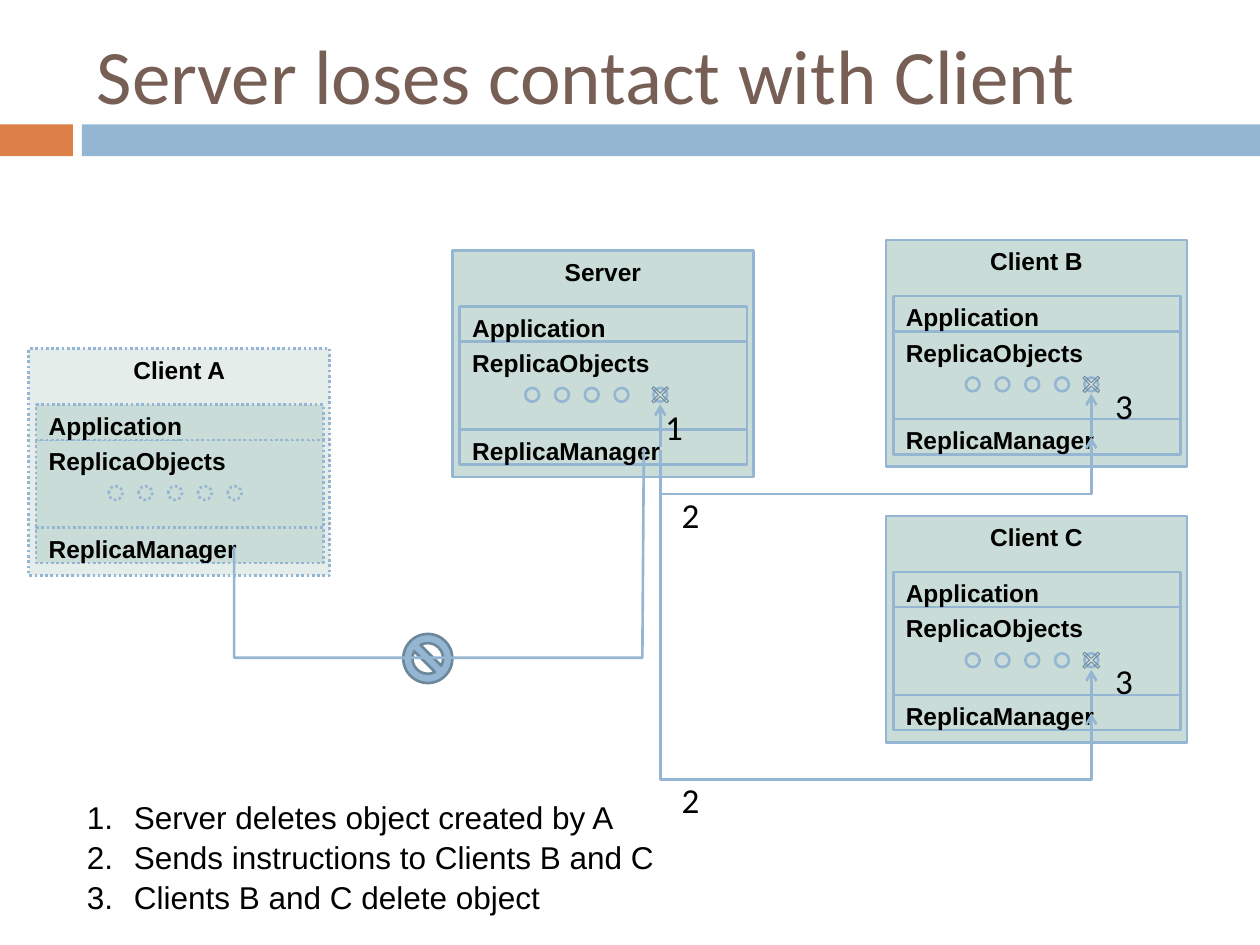
from dataclasses import dataclass

from lxml.etree import SubElement
from pptx import Presentation
from pptx.dml.color import RGBColor
from pptx.enum.dml import MSO_LINE
from pptx.enum.shapes import MSO_CONNECTOR, MSO_SHAPE
from pptx.enum.text import MSO_ANCHOR, PP_ALIGN
from pptx.oxml.ns import qn
from pptx.util import Cm, Pt


@dataclass(frozen=True)
class Theme:
    orange: str = "DD8047"
    blue: str = "94B6D2"
    slate: str = "6D879B"
    sage: str = "CADCD8"
    faded: str = "E5EDEB"
    brown: str = "775F55"
    black: str = "000000"
    title: int = 44
    step: int = 20
    notes: int = 18
    label: int = 14
    heading_font: str = "Calibri"
    body_font: str = "Arial"


theme = Theme()
deck = Presentation()
deck.slide_width, deck.slide_height = Cm(25.4), Cm(19.05)
page = deck.slides.add_slide(deck.slide_layouts[6])


def add_box(kind, left, top, width, height, fill=None, line=None, weight=1.5, dash=None):
    box = page.shapes.add_shape(kind, Cm(left), Cm(top), Cm(width), Cm(height))
    box.shadow.inherit = False
    if fill:
        box.fill.solid()
        box.fill.fore_color.rgb = RGBColor.from_string(fill)
    else:
        box.fill.background()
    if line:
        box.line.color.rgb = RGBColor.from_string(line)
        box.line.width = Pt(weight)
        box.line.dash_style = dash
    else:
        box.line.fill.background()
    return box


def write(box, text, size, font, color=theme.black, bold=False, align=PP_ALIGN.LEFT):
    frame = box.text_frame
    frame.text = text
    frame.word_wrap = True
    frame.vertical_anchor = MSO_ANCHOR.TOP
    for para in frame.paragraphs:
        para.alignment = align
        for span in para.runs:
            span.font.size = Pt(size)
            span.font.name = font
            span.font.bold = bold
            span.font.color.rgb = RGBColor.from_string(color)
    return frame


add_box(MSO_SHAPE.RECTANGLE, 0, 2.51, 1.47, 0.64, theme.orange)
add_box(MSO_SHAPE.RECTANGLE, 1.65, 2.51, 23.75, 0.64, theme.blue)

panels = [
    ("Client A", 0.58, 7.03, theme.faded, MSO_LINE.ROUND_DOT, 1.61, 5),
    ("Server", 9.12, 5.05, theme.sage, None, 1.47, 4),
    ("Client C", 17.86, 10.4, theme.sage, None, 1.61, 4),
    ("Client B", 17.86, 4.84, theme.sage, None, 1.61, 4),
]
layers = [("ReplicaObjects", 1.84, 1.93), ("Application", 1.13, 0.71), ("ReplicaManager", 3.61, 0.71)]
for name, left, top, fill, dash, first_object, object_count in panels:
    panel = add_box(MSO_SHAPE.RECTANGLE, left, top, 6.07, 4.57, fill, theme.blue, dash=dash)
    write(panel, name, theme.label, theme.body_font, bold=True, align=PP_ALIGN.CENTER)
    for label, offset, height in layers:
        layer = add_box(MSO_SHAPE.RECTANGLE, left + 0.15, top + offset, 5.79, height,
                        theme.sage, theme.blue, dash=dash)
        write(layer, label, theme.label, theme.body_font, bold=True)
    for index in range(object_count):
        add_box(MSO_SHAPE.OVAL, left + first_object + 0.6 * index, top + 2.77, 0.28, 0.28,
                theme.sage, theme.blue, dash=dash)

add_box(MSO_SHAPE.NO_SYMBOL, 8.13, 12.78, 0.99, 0.99, theme.blue, theme.slate)

links = [
    ([(13.31, 9.07), (13.31, 9.96), (22, 9.96), (22, 8.81)], True),
    ([(13.31, 9.96), (13.31, 15.72), (22, 15.72), (22, 14.38)], True),
    ([(4.72, 11.02), (4.72, 13.26), (12.95, 13.26), (12.98, 9.04)], False),
]
for points, has_arrow in links:
    start, *corners = [(Cm(x), Cm(y)) for x, y in points]
    builder = page.shapes.build_freeform(*start)
    builder.add_line_segments(corners, close=False)
    link = builder.convert_to_shape()
    link.shadow.inherit = False
    link.fill.background()
    link.line.color.rgb = RGBColor.from_string(theme.blue)
    link.line.width = Pt(1.5)
    if has_arrow:
        SubElement(link.line._get_or_add_ln(), qn("a:tailEnd"), type="arrow")

for center, top in [(13.31, 5.05), (22, 10.4), (22, 4.84)]:
    arrow = page.shapes.add_connector(
        MSO_CONNECTOR.STRAIGHT, Cm(center), Cm(top + 3.1), Cm(center), Cm(top + 3.96))
    arrow.line.color.rgb = RGBColor.from_string(theme.blue)
    arrow.line.width = Pt(1.5)
    SubElement(arrow.line._get_or_add_ln(), qn("a:headEnd"), type="arrow")
    SubElement(arrow._element.spPr, qn("a:effectLst"))
    add_box(MSO_SHAPE.OVAL, center - 0.14, top + 2.77, 0.28, 0.28, theme.sage, theme.blue)
    cross = add_box(MSO_SHAPE.MATH_MULTIPLY, center - 0.29, top + 2.63, 0.58, 0.56,
                    line=theme.slate, weight=0.5)
    cross.adjustments[0] = 0.09

steps = [("1", 13.16, 8.05), ("2", 13.49, 9.83), ("2", 13.49, 15.57), ("3", 22.23, 13.18), ("3", 22.23, 7.62)]
for number, left, top in steps:
    marker = page.shapes.add_textbox(Cm(left), Cm(top), Cm(0.58), Cm(1.96))
    write(marker, number, theme.step, theme.heading_font)

title = page.shapes.add_textbox(Cm(1.7), Cm(0.64), Cm(22.66), Cm(1.7))
title_frame = write(title, "Server loses contact with Client", theme.title, theme.heading_font, theme.brown)
title_frame.vertical_anchor = MSO_ANCHOR.MIDDLE

notes = page.shapes.add_textbox(Cm(1.5), Cm(15.93), Cm(12.01), Cm(2.57))
notes_frame = write(
    notes,
    "Server deletes object created by A\nSends instructions to Clients B and C\nClients B and C delete object",
    theme.notes, theme.body_font)
notes_frame.word_wrap = False
for para in notes_frame.paragraphs:
    para.line_spacing = 1.05
    properties = para._p.get_or_add_pPr()
    properties.set("marL", str(Cm(0.95)))
    properties.set("indent", str(Cm(-0.95)))
    SubElement(properties, qn("a:buAutoNum"), type="arabicPeriod")

deck.save("out.pptx")
